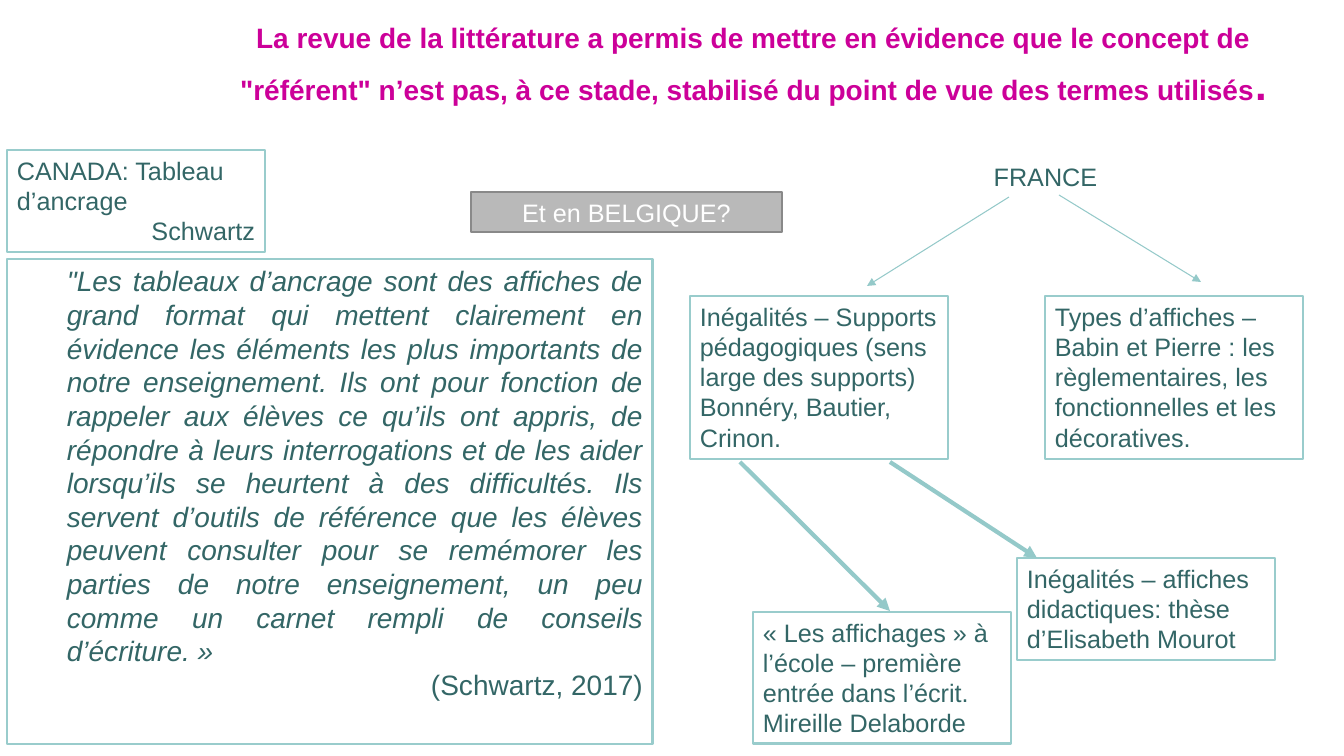
from pptx import Presentation
from pptx.dml.color import RGBColor
from pptx.enum.shapes import MSO_CONNECTOR as Link, MSO_SHAPE as Shape
from pptx.enum.text import MSO_ANCHOR as Anchor, PP_ALIGN as Align
from pptx.oxml.ns import qn
from pptx.util import Pt
from lxml.etree import SubElement

SCALE = 914400 / 100.8
INK, EDGE, ARROW, PINK = "336666", "99CCCC", "94C9C9", "CC0099"
WHITE, GREY, DARK = "FFFFFF", "B9B9B9", "898989"

QUOTE = (
    "\"Les tableaux d’ancrage sont des affiches de grand format qui mettent "
    "clairement en évidence les éléments les plus importants de notre "
    "enseignement. Ils ont pour fonction de rappeler aux élèves ce qu’ils ont "
    "appris, de répondre à leurs interrogations et de les aider lorsqu’ils se "
    "heurtent à des difficultés. Ils servent d’outils de référence que les "
    "élèves peuvent consulter pour se remémorer les parties de notre "
    "enseignement, un peu comme un carnet rempli de conseils d’écriture. »"
)

BOXES = [
    ((690, 296, 258, 163),
     ["Inégalités – Supports pédagogiques (sens large des supports)",
      "Bonnéry, Bautier, Crinon."]),
    ((1017, 558, 258, 102),
     ["Inégalités – affiches didactiques: thèse d’Elisabeth Mourot"]),
    ((1045, 296, 258, 163),
     ["Types d’affiches – Babin et Pierre : les règlementaires, "
      "les fonctionnelles et les décoratives."]),
    ((753, 612, 258, 132),
     ["« Les affichages » à l’école – première entrée dans l’écrit. "
      "Mireille Delaborde"]),
]

ARROWS = [
    ((1009, 197), (867, 286), 0.75),
    ((1059, 195), (1201, 282), 0.75),
    ((890, 462), (1037, 558), 3),
    ((740, 462), (890, 611), 3),
]


def px(n):
    return round(n * SCALE)


def rgb(code):
    return RGBColor.from_string(code)


def style(run, size, color, bold=False, italic=False):
    font = run.font
    font.name, font.size = "Arial", Pt(size)
    font.bold, font.italic = bold, italic
    font.color.rgb = rgb(color)


def write(shape, lines, size=18, color=INK, align=Align.LEFT):
    frame = shape.text_frame
    frame.word_wrap = True
    frame.vertical_anchor = Anchor.TOP
    frame.text = "\n".join(lines)
    for para in frame.paragraphs:
        para.alignment = align
        for run in para.runs:
            style(run, size, color)
    return frame.paragraphs


def add_box(slide, place, lines, fill=WHITE, edge=EDGE, **text):
    box = slide.shapes.add_shape(Shape.RECTANGLE, *map(px, place))
    box.shadow.inherit = False
    box.fill.solid()
    box.fill.fore_color.rgb = rgb(fill)
    box.line.color.rgb = rgb(edge)
    box.line.width = Pt(2)
    return write(box, lines, **text)


def add_label(slide, place, text):
    label = slide.shapes.add_textbox(*map(px, place))
    write(label, [text], align=Align.CENTER)


def add_arrow(slide, start, end, width):
    arrow = slide.shapes.add_connector(Link.STRAIGHT, *map(px, start + end))
    arrow.line.color.rgb = rgb(ARROW)
    arrow.line.width = Pt(width)
    SubElement(arrow.line._get_or_add_ln(), qn("a:tailEnd"), type="triangle")
    SubElement(arrow._element.spPr, qn("a:effectLst"))


def add_title(slide):
    title = slide.shapes.title
    title.left, title.top, title.width, title.height = map(
        px, (204, 12, 1099, 102))
    para, = write(title, [
        "La revue de la littérature a permis de mettre en évidence que le "
        "concept de \"référent\" n’est pas, à ce stade, stabilisé du point de "
        "vue des termes utilisés"], align=Align.CENTER)
    title.text_frame.vertical_anchor = Anchor.MIDDLE
    para.line_spacing = 1.1
    style(para.runs[0], 20, PINK, bold=True)
    dot = para.add_run()
    dot.text = "."
    style(dot, 30, PINK, bold=True)


def add_quote(slide):
    quote, cite = add_box(slide, (7, 259, 646, 485),
                          [QUOTE, "(Schwartz, 2017)"], size=20)
    for para in (quote, cite):
        para._p.get_or_add_pPr().set("marL", str(px(50)))
    quote.alignment = Align.JUSTIFY
    quote.runs[0].font.italic = True
    cite.alignment = Align.RIGHT


def main():
    deck = Presentation()
    deck.slide_width, deck.slide_height = px(1344), px(756)
    slide = deck.slides.add_slide(deck.slide_layouts[5])
    add_title(slide)
    add_label(slide, (890, 156, 311, 40), "FRANCE")
    for place, lines in BOXES:
        add_box(slide, place, lines)
    canada = add_box(slide, (7, 150, 258, 102),
                     ["CANADA: Tableau d’ancrage", "Schwartz"])
    canada[1].alignment = Align.RIGHT
    add_quote(slide)
    add_box(slide, (471, 192, 311, 40), ["Et en BELGIQUE?"], fill=GREY,
            edge=DARK, color=WHITE, align=Align.CENTER)
    for start, end, width in ARROWS:
        add_arrow(slide, start, end, width)
    deck.save("out.pptx")


if __name__ == "__main__":
    main()
